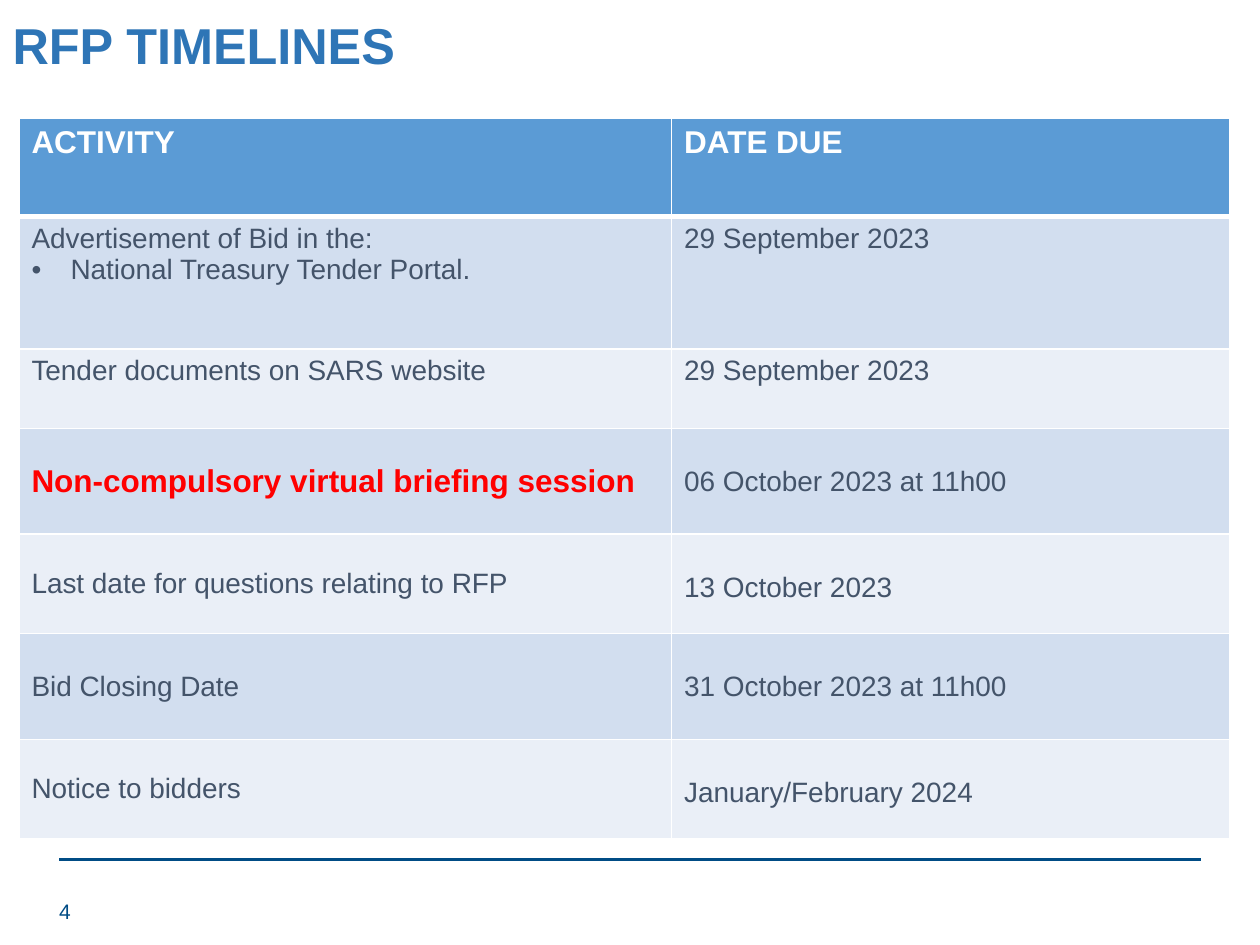
import pptx
import pptx.util
import pptx.dml.color
import pptx.enum.text
import pptx.enum.shapes
import pptx.oxml.ns
from lxml import etree
from dataclasses import dataclass

Inches, Pt = pptx.util.Inches, pptx.util.Pt
RGB = pptx.dml.color.RGBColor.from_string
ANCHOR = pptx.enum.text.MSO_ANCHOR
qn = pptx.oxml.ns.qn


@dataclass
class Theme:
    font: str = "Arial"
    title: str = "2E75B6"
    navy: str = "004C85"
    header: str = "5B9BD5"
    bands: tuple = ("D2DEEF", "EAEFF7")
    text: str = "44546A"
    alert: str = "FF0000"
    white: str = "FFFFFF"
    title_size: float = 28.8
    strong_size: int = 18
    body_size: int = 16
    small_size: int = 12


theme = Theme()


def format_runs(tf, size, color, bold=False):
    for p in tf.paragraphs:
        for r in p.runs:
            r.font.name = theme.font
            r.font.size = Pt(size)
            r.font.bold = bold
            r.font.color.rgb = RGB(color)


def add_border(cell, side, width):
    ln = etree.SubElement(cell._tc.get_or_add_tcPr(), qn("a:ln" + side), w=str(Pt(width)))
    fill = etree.SubElement(ln, qn("a:solidFill"))
    etree.SubElement(fill, qn("a:srgbClr"), val=theme.white)


prs = pptx.Presentation()
prs.slide_width, prs.slide_height = Inches(10), Inches(7.5)
s = prs.slides.add_slide(prs.slide_layouts[5])

# Footer rule
line = s.shapes.add_connector(pptx.enum.shapes.MSO_CONNECTOR.STRAIGHT,
                              Inches(0.47), Inches(6.82), Inches(9.53), Inches(6.82))
line.line.color.rgb = RGB(theme.navy)
line.line.width = Pt(2)
etree.SubElement(line._element.spPr, qn("a:effectLst"))

# Title
title = s.shapes.title
title.left, title.top, title.width, title.height = map(Inches, (0, 0.12, 8.62, 0.58))
tf = title.text_frame
tf.text = "RFP TIMELINES"
tf.vertical_anchor = ANCHOR.TOP
tf.auto_size = pptx.enum.text.MSO_AUTO_SIZE.NONE
tf.paragraphs[0].alignment = pptx.enum.text.PP_ALIGN.LEFT
tf.paragraphs[0].line_spacing = 0.9
format_runs(tf, theme.title_size, theme.title, True)

# Page number
tf = s.shapes.add_textbox(Inches(0.37), Inches(7.03), Inches(2.25), Inches(0.4)).text_frame
tf.word_wrap = True
tf.vertical_anchor = ANCHOR.MIDDLE
tf.text = "4"
format_runs(tf, theme.small_size, theme.navy)

# Timeline table
rows = [
    ("ACTIVITY", "DATE DUE"),
    ("Advertisement of Bid in the:\nNational Treasury Tender Portal.", "29 September 2023"),
    ("Tender documents on SARS website", "29 September 2023"),
    ("Non-compulsory virtual briefing session", "06 October 2023 at 11h00"),
    ("Last date for questions relating to RFP", "13 October 2023"),
    ("Bid Closing Date", "31 October 2023 at 11h00"),
    ("Notice to bidders", "January/February 2024"),
]
heights = [0.78, 1.05, 0.63, 0.84, 0.79, 0.84, 0.79]
widths = [5.18, 4.43]
ALERT_ROW = 3
FIRST_SPACED_ROW = 3

table = s.shapes.add_table(len(rows), len(widths), Inches(0.15), Inches(0.94),
                           Inches(sum(widths)), Inches(sum(heights))).table
for column, width in zip(table.columns, widths):
    column.width = Inches(width)

for i, (texts, height) in enumerate(zip(rows, heights)):
    table.rows[i].height = Inches(height)
    for j, text in enumerate(texts):
        cell = table.cell(i, j)
        for side in "LRTB":
            under_header = (i, side) in ((0, "B"), (1, "T"))
            add_border(cell, side, 3 if under_header else 1)
        cell.fill.solid()
        cell.fill.fore_color.rgb = RGB(theme.bands[(i - 1) % 2] if i else theme.header)
        cell.text_frame.text = text
        if i >= FIRST_SPACED_ROW:
            if j == 0:
                cell.vertical_anchor = ANCHOR.MIDDLE
            else:
                cell.margin_top = Inches(0.3)
        if i == 0:
            format_runs(cell.text_frame, theme.strong_size, theme.white, True)
        elif (i, j) == (ALERT_ROW, 0):
            format_runs(cell.text_frame, theme.strong_size, theme.alert, True)
        else:
            format_runs(cell.text_frame, theme.body_size, theme.text)

# Bullet under the advertisement row
pPr = table.cell(1, 0).text_frame.paragraphs[1]._p.get_or_add_pPr()
pPr.set("marL", str(Inches(0.31)))
pPr.set("indent", str(-Inches(0.31)))
etree.SubElement(pPr, qn("a:buFont"), typeface=theme.font)
etree.SubElement(pPr, qn("a:buChar"), char="•")

prs.save("out.pptx")
